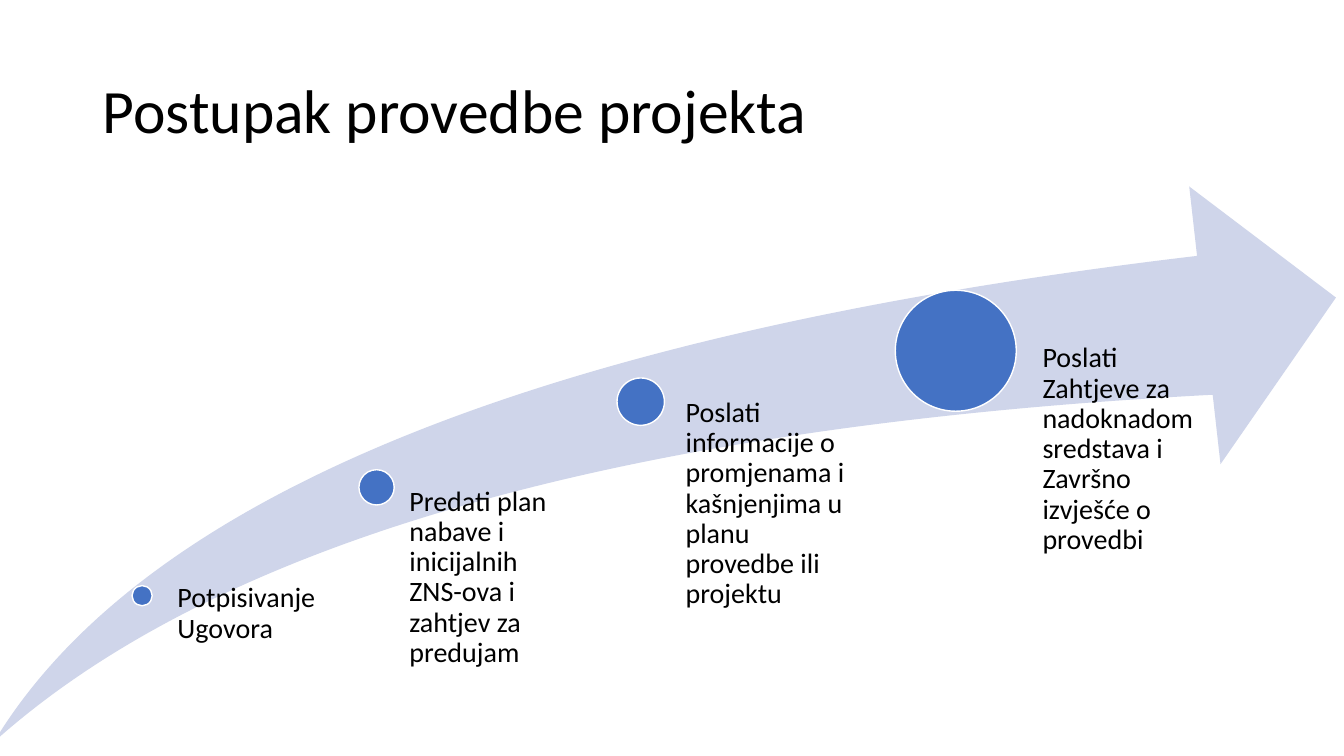
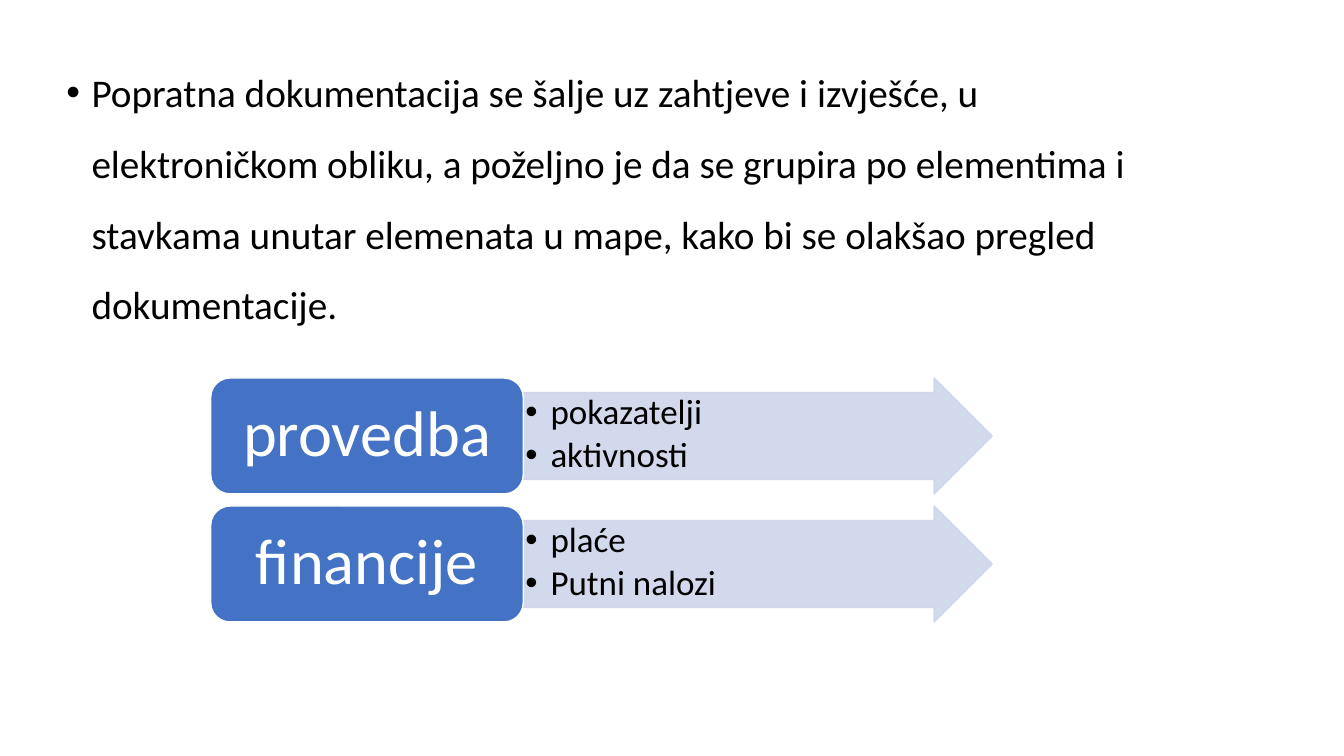
from lxml.etree import SubElement
from pptx import Presentation
from pptx.dml.color import RGBColor
from pptx.enum.shapes import MSO_SHAPE as Shape
from pptx.enum.text import MSO_ANCHOR as Anchor, PP_ALIGN as Align
from pptx.oxml.ns import qn
from pptx.util import Inches, Pt


def color(hex_code):
    return RGBColor.from_string(hex_code)


class Deck:
    """Holds the shared style and the slide being built."""

    FONT = "Calibri"
    INK = "000000"
    WHITE = "FFFFFF"
    ACCENT = "4472C4"
    PALE = "CFD5EA"

    def __init__(self):
        self.prs = Presentation()
        self.prs.slide_width = Inches(13.33)
        self.prs.slide_height = Inches(7.5)
        self.slide = None

    def new_slide(self):
        self.slide = self.prs.slides.add_slide(self.prs.slide_layouts[6])

    def fill_text(self, frame, lines, size, ink=INK,
                  insets=(0.1, 0.05, 0.1, 0.05), anchor=Anchor.TOP,
                  align=Align.LEFT, spacing=0.9, before=0, after=0,
                  bullet=False):
        frame.text = "\n".join(lines)
        frame.word_wrap = True
        frame.vertical_anchor = anchor
        (frame.margin_left, frame.margin_top,
         frame.margin_right, frame.margin_bottom) = map(Inches, insets)
        for paragraph in frame.paragraphs:
            paragraph.alignment = align
            paragraph.line_spacing = spacing
            paragraph.space_before = Pt(before)
            paragraph.space_after = Pt(after)
            if bullet:
                self.add_bullet(paragraph)
            for run in paragraph.runs:
                run.font.name = self.FONT
                run.font.size = Pt(size)
                run.font.color.rgb = color(ink)

    def add_bullet(self, paragraph):
        props = paragraph._p.get_or_add_pPr()
        props.set("marL", str(Inches(0.25)))
        props.set("indent", str(Inches(-0.25)))
        SubElement(props, qn("a:buFont")).set("typeface", "Arial")
        SubElement(props, qn("a:buChar")).set("char", "•")

    def text(self, box, lines, size, **style):
        label = self.slide.shapes.add_textbox(*map(Inches, box))
        self.fill_text(label.text_frame, lines, size, **style)

    def title(self, words):
        self.text((0.92, 0.4, 11.5, 1.45), [words], 44, anchor=Anchor.MIDDLE)

    def shape(self, preset, box, fill, line=None, adjust=(), opacity=100):
        figure = self.slide.shapes.add_shape(preset, *map(Inches, box))
        figure.shadow.inherit = False
        for index, value in enumerate(adjust):
            figure.adjustments[index] = value
        figure.fill.solid()
        figure.fill.fore_color.rgb = color(fill)
        if line:
            figure.line.color.rgb = color(line)
            figure.line.width = Pt(1)
        else:
            figure.line.fill.background()
        if opacity < 100:
            for tint in figure._element.spPr.iter(qn("a:srgbClr")):
                SubElement(tint, qn("a:alpha")).set("val", str(opacity * 1000))
        return figure

    def milestone(self, dot, label, inset, words):
        left, top, size = dot
        self.shape(Shape.OVAL, (left, top, size, size), self.ACCENT, self.WHITE)
        self.text(label, [words], 20, insets=(inset, 0, 0, 0))

    def category(self, top, name, items):
        height = 1.15
        arrow = self.shape(Shape.RIGHT_ARROW, (5.19, top, 4.65, height),
                           self.PALE, self.PALE, (0.75, 0.5), 90)
        self.fill_text(arrow.text_frame, items, 25, insets=(0.02,) * 4,
                       after=3.75, bullet=True)
        block = self.shape(Shape.ROUNDED_RECTANGLE, (2.09, top, 3.1, height),
                           self.ACCENT, self.WHITE)
        self.fill_text(block.text_frame, [name], 46, self.WHITE,
                       (0.19, 0.1, 0.19, 0.1), Anchor.MIDDLE, Align.CENTER)


def build_procedure(deck):
    deck.new_slide()
    deck.title("Postupak provedbe projekta")
    deck.shape(Shape.SWOOSH_ARROW, (-0.06, 1.85, 13.31, 5.51), deck.PALE,
               adjust=(0.25, 0.25))
    milestones = [
        ((1.31, 5.81, 0.2), (1.65, 5.79, 1.51, 1.31), 0.11,
         "Potpisivanje Ugovora"),
        ((3.56, 4.66, 0.35), (3.87, 4.83, 1.85, 2.52), 0.19,
         "Predati plan nabave i inicijalnih ZNS-ova i zahtjev za predujam"),
        ((6.12, 3.75, 0.47), (6.55, 3.95, 1.85, 3.4), 0.25,
         "Poslati informacije o promjenama i kašnjenjima u planu provedbe "
         "ili projektu"),
        ((8.88, 2.88, 1.2), (10.01, 3.41, 1.85, 3.95), 0.33,
         "Poslati Zahtjeve za nadoknadom sredstava i Završno izvješće "
         "o provedbi"),
    ]
    for milestone in milestones:
        deck.milestone(*milestone)


def build_documentation(deck):
    deck.new_slide()
    deck.text((0.56, 0.4, 11.5, 4.76),
              ["Popratna dokumentacija se šalje uz zahtjeve i izvješće, u "
               "elektroničkom obliku, a poželjno je da se grupira po elementima "
               "i stavkama unutar elemenata u mape, kako bi se olakšao pregled "
               "dokumentacije."],
              28, spacing=1.5, before=10, bullet=True)
    categories = [("provedba", ["pokazatelji", "aktivnosti"]),
                  ("financije", ["plaće", "Putni nalozi"])]
    for row, (name, items) in enumerate(categories):
        deck.category(3.75 + row * 1.27, name, items)


def main():
    deck = Deck()
    build_procedure(deck)
    build_documentation(deck)
    deck.prs.save("out.pptx")


if __name__ == "__main__":
    main()
